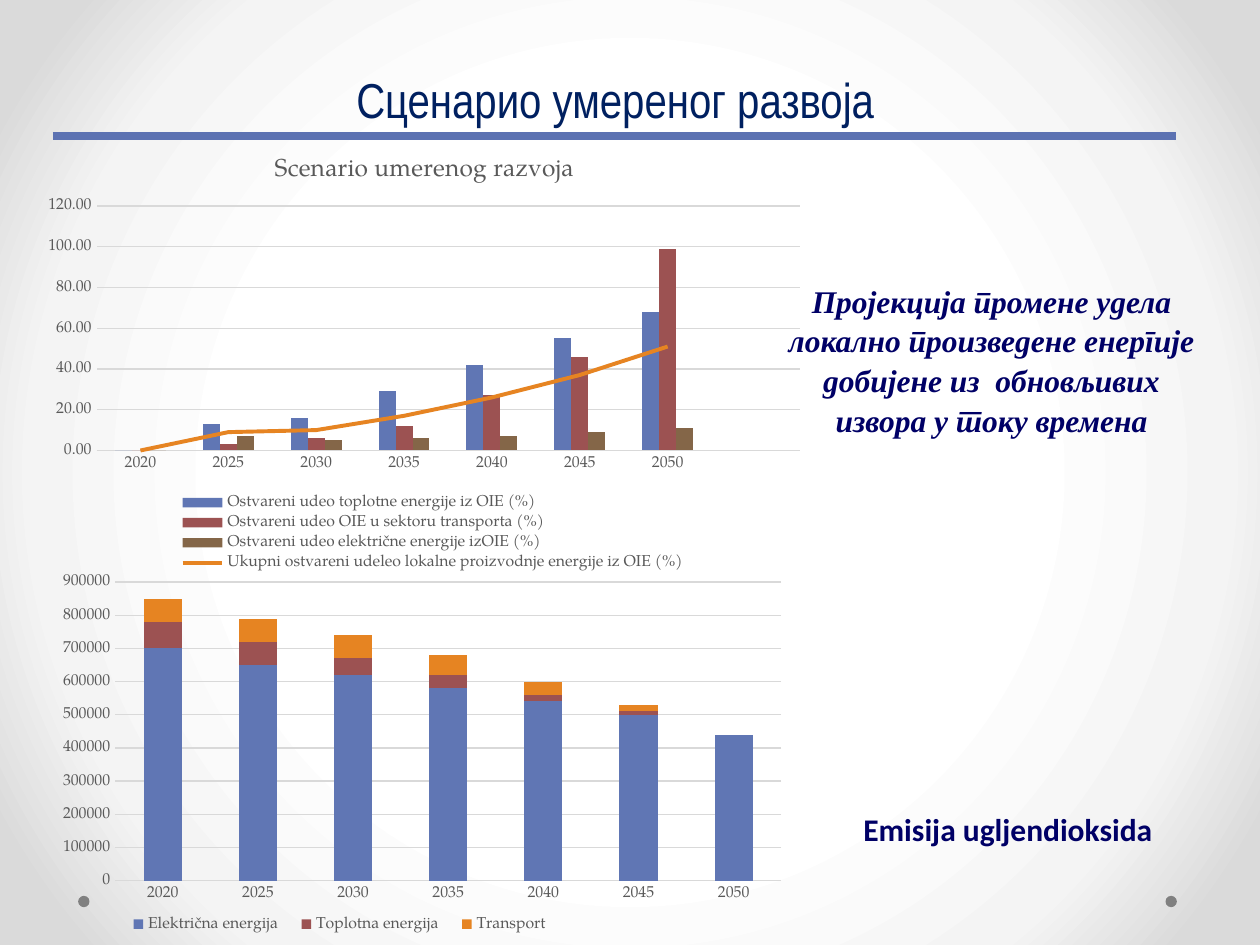
from lxml import etree
from pptx import Presentation
from pptx.chart.data import CategoryChartData
from pptx.dml.color import RGBColor
from pptx.enum.chart import XL_CHART_TYPE as ChartType
from pptx.enum.chart import XL_LEGEND_POSITION as LegendPosition
from pptx.enum.chart import XL_MARKER_STYLE as MarkerStyle
from pptx.enum.chart import XL_TICK_MARK as TickMark
from pptx.enum.lang import MSO_LANGUAGE_ID as Language
from pptx.enum.shapes import MSO_CONNECTOR as Connector
from pptx.enum.shapes import MSO_SHAPE as Shape
from pptx.enum.text import MSO_ANCHOR as Anchor
from pptx.enum.text import PP_ALIGN as Align
from pptx.oxml.ns import qn
from pptx.oxml.xmlchemy import OxmlElement
from pptx.util import Inches, Pt

CHART_FONT = "TeX Gyre Pagella"
GRAY, GRID, NAVY = "595959", "D9D9D9", "000066"
BLUE, RED, BROWN, ORANGE = "6076B4", "9C5252", "846648", "E68422"
YEARS = [str(year) for year in range(2020, 2051, 5)]

SHARES = [
    ("Ostvareni udeo toplotne energije iz OIE (%)", BLUE, (0, 13, 16, 29, 42, 55, 68)),
    ("Ostvareni udeo OIE u sektoru transporta (%)", RED, (0, 3, 6, 12, 27, 46, 99)),
    ("Ostvareni udeо električne energije izOIE (%)", BROWN, (0, 7, 5, 6, 7, 9, 11)),
    ("Ukupni ostvareni udeleo lokalne proizvodnje energije iz OIE (%)", ORANGE,
     (0, 9, 10, 17, 26, 37, 51)),
]
EMISSIONS = [
    ("Električna energija", BLUE, (700000, 650000, 620000, 580000, 540000, 500000, 440000)),
    ("Toplotna energija", RED, (80000, 70000, 50000, 40000, 20000, 10000, 0)),
    ("Transport", ORANGE, (70000, 70000, 70000, 60000, 40000, 20000, 0)),
]


def color(value):
    return RGBColor.from_string(value)


def place(box):
    return [Inches(length) for length in box]


def style_font(font, name, size, value):
    font.name, font.size = name, Pt(size)
    font.color.rgb = color(value)


def paint_background(page):
    """White centre fading to gray in circles."""
    fill = page.background.fill
    fill.gradient()
    gradient = page.background._cSld.find(".//" + qn("a:gradFill"))
    for child in list(gradient):
        gradient.remove(child)
    stops = etree.SubElement(gradient, qn("a:gsLst"))
    for position, value in ((50, "FFFFFF"), (76, "F4F4F4"), (92, "DADADA")):
        stop = etree.SubElement(stops, qn("a:gs"), pos=str(position * 1000))
        etree.SubElement(stop, qn("a:srgbClr"), val=value)
    circle = etree.SubElement(gradient, qn("a:path"))
    circle.set("path", "circle")
    etree.SubElement(circle, qn("a:fillToRect"), l="50000", t="50000", r="50000", b="50000")


def add_dot(page, box):
    dot = page.shapes.add_shape(Shape.OVAL, *place(box))
    dot.shadow.inherit = False
    dot.fill.solid()
    dot.fill.fore_color.rgb = color("808080")
    dot.line.fill.background()


def add_text(page, box, text, font, size, value):
    frame = page.shapes.add_textbox(*place(box)).text_frame
    frame.word_wrap = True
    para = frame.paragraphs[0]
    para.text = text
    para.alignment = Align.CENTER
    style_font(para.font, font, size, value)
    return frame, para


def add_heading(page, box):
    frame, para = add_text(page, box, "Сценарио умереног развоја ", "Arial Narrow", 28, "002060")
    frame.vertical_anchor = Anchor.BOTTOM
    para.line_spacing = Pt(58)
    left, top, _, height = box
    ends = place((left + 0.07, top + height + 0.01, 9.33, top + height + 0.01))
    rule = page.shapes.add_connector(Connector.STRAIGHT, *ends)
    rule.line.color.rgb = color("5C72B2")
    rule.line.width = Pt(4.5)
    etree.SubElement(rule._element.spPr, qn("a:effectLst"))


def set_layout(parent, index, box, inner=False):
    """Place a chart part by fractions of the chart's size."""
    for old in parent.findall(qn("c:layout")):
        parent.remove(old)
    layout = OxmlElement("c:layout")
    manual = etree.SubElement(layout, qn("c:manualLayout"))
    if inner:
        etree.SubElement(manual, qn("c:layoutTarget"), val="inner")
    for mode in ("xMode", "yMode"):
        etree.SubElement(manual, qn("c:" + mode), val="edge")
    for key, fraction in zip("xywh", box):
        etree.SubElement(manual, qn("c:" + key), val=str(fraction))
    parent.insert(index, layout)


def add_column_chart(page, box, kind, categories, rows, number_format,
                     top_value, step, plot_box, legend_box):
    data = CategoryChartData()
    data.categories = categories
    for name, _, values in rows:
        data.add_series(name, values)
    chart = page.shapes.add_chart(kind, *place(box), data).chart
    style_font(chart.font, CHART_FONT, 9, GRAY)
    chart.has_title = False
    for series, (_, value, _) in zip(chart.plots[0].series, rows):
        series.format.fill.solid()
        series.format.fill.fore_color.rgb = color(value)
    chart.plots[0].vary_by_categories = False

    for axis in (chart.category_axis, chart.value_axis):
        axis.major_tick_mark = axis.minor_tick_mark = TickMark.NONE
        style_font(axis.tick_labels.font, CHART_FONT, 9, GRAY)
    scale = chart.value_axis
    scale.minimum_scale, scale.maximum_scale, scale.major_unit = 0, top_value, step
    scale.tick_labels.number_format = number_format
    scale.tick_labels.number_format_is_linked = False
    scale.format.line.fill.background()
    for line in (chart.category_axis.format.line, scale.major_gridlines.format.line):
        line.color.rgb = color(GRID)
        line.width = Pt(0.75)

    chart.has_legend = True
    legend = chart.legend
    legend.position = LegendPosition.BOTTOM
    legend.include_in_layout = False
    style_font(legend.font, CHART_FONT, 9, GRAY)
    set_layout(legend._element, 1, legend_box)
    set_layout(chart._chartSpace.chart.plotArea, 0, plot_box, inner=True)
    return chart


def turn_last_series_into_line(chart, value):
    bars = chart.plots[0]._element
    series = bars.findall(qn("c:ser"))[-1]
    for tag in ("c:invertIfNegative", "c:spPr"):
        for child in series.findall(qn(tag)):
            series.remove(child)
    lines = OxmlElement("c:lineChart")
    etree.SubElement(lines, qn("c:grouping"), val="standard")
    etree.SubElement(lines, qn("c:varyColors"), val="0")
    lines.append(series)
    etree.SubElement(lines, qn("c:marker"), val="1")
    for axis in bars.findall(qn("c:axId")):
        etree.SubElement(lines, qn("c:axId"), val=axis.get("val"))
    bars.addnext(lines)
    line_series = chart.plots[1].series[0]
    line_series.smooth = False
    line_series.marker.style = MarkerStyle.NONE
    line_series.format.line.color.rgb = color(value)
    line_series.format.line.width = Pt(2.25)


def add_share_chart(page, box):
    chart = add_column_chart(
        page, box, ChartType.COLUMN_CLUSTERED, YEARS + [""], SHARES, "#,##0.00", 120, 20,
        (0.08, 0.16, 0.9, 0.55), (0.17, 0.8, 0.68, 0.19))
    chart.plots[0].gap_width = 219
    turn_last_series_into_line(chart, ORANGE)
    chart.has_title = True
    para = chart.chart_title.text_frame.paragraphs[0]
    para.text = "Scenario umerenog razvoja"
    style_font(para.font, CHART_FONT, 14, GRAY)
    para.font.bold = False


def add_emission_chart(page, box):
    chart = add_column_chart(
        page, box, ChartType.COLUMN_STACKED, YEARS, EMISSIONS, "General", 900000, 100000,
        (0.09, 0.04, 0.89, 0.79), (0.09, 0.91, 0.6, 0.07))
    chart.plots[0].gap_width, chart.plots[0].overlap = 150, 100


def add_captions(page):
    _, share = add_text(
        page, (6.12, 2.17, 3.5, 1.31),
        "Пројекција промене удела локално произведене енергије "
        "добијене из  обновљивих извора у току времена", "Times New Roman", 18, NAVY)
    share.font.bold = share.font.italic = True
    share.line_spacing = 1.05
    share.runs[0].font.language_id = Language.SERBIAN_CYRILLIC
    _, emission = add_text(page, (5.5, 6.38, 5, 0.4), "Emisija ugljendioksida",
                           "Calibri", 18, NAVY)
    emission.font.bold = True


def main():
    deck = Presentation()
    deck.slide_width, deck.slide_height = Inches(10), Inches(7.5)
    page = deck.slides.add_slide(deck.slide_layouts[6])
    paint_background(page)
    for left in (9.25, 0.62):
        add_dot(page, (left, 7.11, 0.09, 0.09))
    add_heading(page, (0.35, 0, 9.15, 1.07))
    add_captions(page)
    add_emission_chart(page, (0.38, 4.5, 5.94, 3))
    add_share_chart(page, (0.27, 1.07, 6.2, 3.53))
    deck.save("out.pptx")


if __name__ == "__main__":
    main()
